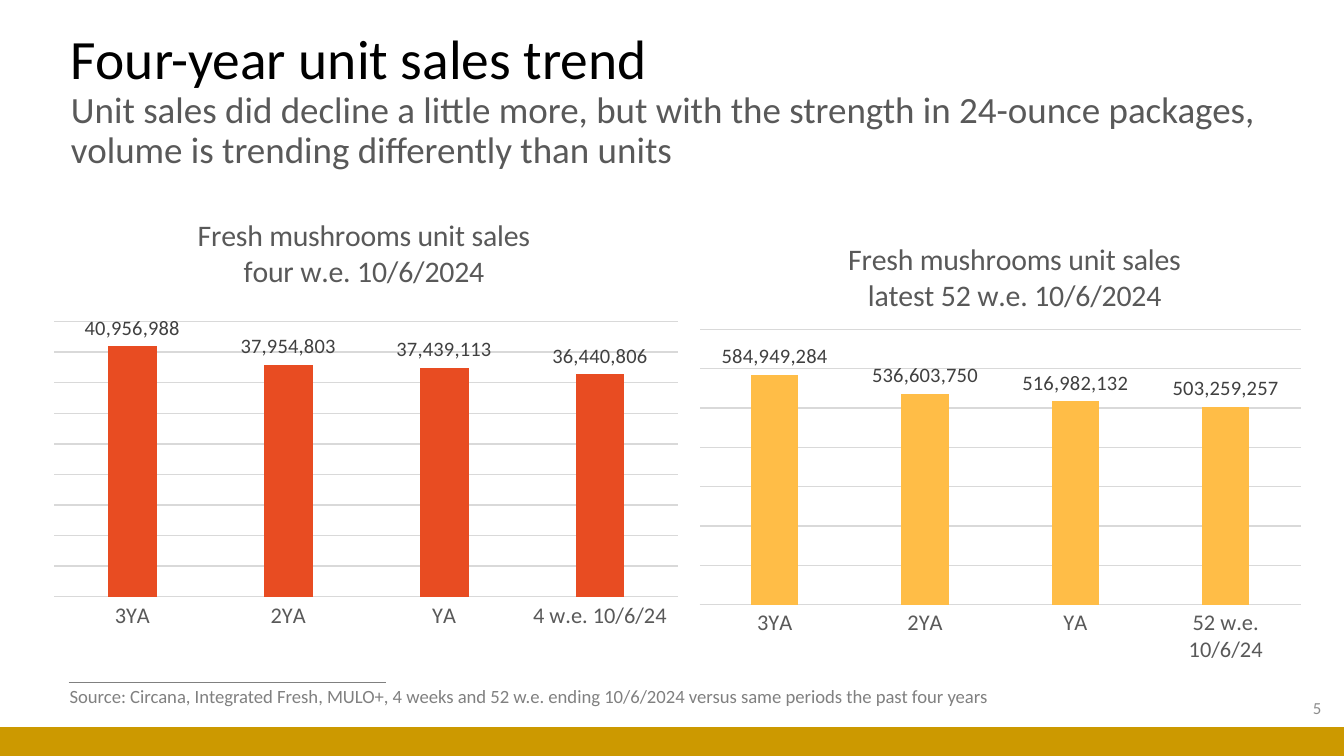
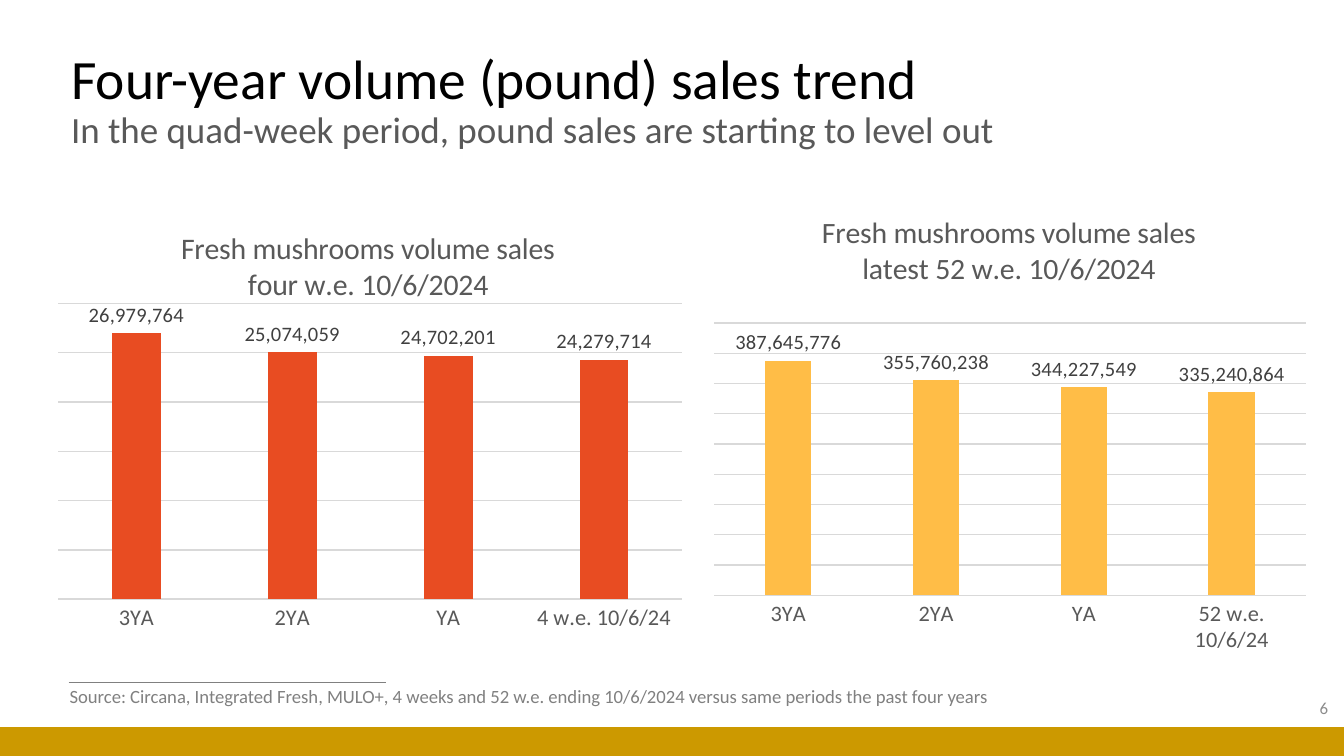
from dataclasses import dataclass
from typing import Any

from lxml.etree import SubElement
from pptx import Presentation
from pptx.chart.data import CategoryChartData
from pptx.dml.color import RGBColor
from pptx.enum.chart import XL_CHART_TYPE, XL_LABEL_POSITION, XL_TICK_LABEL_POSITION, XL_TICK_MARK
from pptx.enum.shapes import MSO_CONNECTOR, MSO_SHAPE
from pptx.enum.text import MSO_ANCHOR, MSO_AUTO_SIZE, PP_ALIGN
from pptx.oxml.ns import qn
from pptx.util import Inches, Pt

BLACK = RGBColor(0x00, 0x00, 0x00)
WHITE = RGBColor(0xFF, 0xFF, 0xFF)
DARK = RGBColor(0x40, 0x40, 0x40)
GRAY = RGBColor(0x59, 0x59, 0x59)
MID = RGBColor(0x80, 0x80, 0x80)
SOFT = RGBColor(0x8C, 0x8C, 0x8C)
PALE = RGBColor(0xD9, 0xD9, 0xD9)
GOLD = RGBColor(0xCC, 0x99, 0x00)
RED = RGBColor(0xE8, 0x4C, 0x22)
AMBER = RGBColor(0xFF, 0xBD, 0x47)

FACE = "Calibri"
WIDE = Inches(10)
HIGH = WIDE * 9 // 16
COMMAS = {"number_format": "#,##0", "number_format_is_linked": False}
SOURCE = ("Source: Circana, Integrated Fresh, MULO+, 4 weeks and 52 w.e. ending 10/6/2024 "
          "versus same periods the past four years")


@dataclass
class Bars:
    box: tuple[float, float, float, float]
    title: str
    spot: tuple[float, float]
    plot: tuple[float, float, float, float]
    last: str
    values: tuple[int, ...]
    color: RGBColor


@dataclass
class Page:
    head: str
    sub: str
    width: float
    number: int
    edge: float
    charts: tuple[Bars, ...]


PAGES = (
    Page("Four-year unit sales trend",
         "Unit sales did decline a little more, but with the strength in 24-ounce packages, "
         "volume is trending differently than units", 9.06, 5, 7.68, (
             Bars((0.4, 1.46, 4.65, 3.31), "Fresh mushrooms unit sales\nfour w.e. 10/6/2024",
                  (22.3, 3.5), (0, 28.2, 100, 61.9), "4 w.e. 10/6/24",
                  (40956988, 37954803, 37439113, 36440806), RED),
             Bars((5.2, 1.63, 4.72, 3.42), "Fresh mushrooms unit sales\nlatest 52 w.e. 10/6/2024",
                  (22.8, 3.6), (0, 24, 94.9, 59.9), "52 w.e. 10/6/24",
                  (584949284, 536603750, 516982132, 503259257), AMBER))),
    Page("Four-year volume (pound) sales trend",
         "In the quad-week period, pound sales are starting to level out", 8.35, 6, 7.73, (
             Bars((0.43, 1.55, 4.65, 3.31), "Fresh mushrooms volume sales\nfour w.e. 10/6/2024",
                  (19, 3.6), (0, 21.4, 100, 66.5), "4 w.e. 10/6/24",
                  (26979764, 25074059, 24702201, 24279714), RED),
             Bars((5.31, 1.55, 4.41, 3.31), "Fresh mushrooms volume sales\nlatest 52 w.e. 10/6/2024",
                  (17.5, 0.2), (0, 26.1, 100, 61.9), "52 w.e. 10/6/24",
                  (387645776, 355760238, 344227549, 335240864), AMBER))),
)


def apply(target: Any, values: dict[str, Any]) -> None:
    for name, value in values.items():
        setattr(target, name, value)


def ink(font: Any, size: float, color: RGBColor) -> None:
    apply(font, {"name": FACE, "size": Pt(size), "bold": False})
    font.color.rgb = color


def stroke(line: Any, color: RGBColor, width: float) -> None:
    line.color.rgb = color
    line.width = Pt(width)


def add_text(slide: Any, box: tuple[float, ...], parts: list[tuple[str, float, RGBColor]],
             frame: dict[str, Any], para: dict[str, Any]) -> None:
    body = slide.shapes.add_textbox(*map(Inches, box)).text_frame
    apply(body, {"word_wrap": True, **frame})
    first = body.paragraphs[0]
    apply(first, para)
    for index, (text, size, color) in enumerate(parts):
        if index:
            first.add_line_break()
        run = first.add_run()
        run.text = text
        ink(run.font, size, color)


def place(node: Any, index: int, shares: tuple[float, ...]) -> None:
    for old in node.findall(qn("c:layout")):
        node.remove(old)
    outer = SubElement(node, qn("c:layout"))
    node.insert(index, outer)
    inner = SubElement(outer, qn("c:manualLayout"))
    items = [("xMode", "edge"), ("yMode", "edge")]
    items += [(tag, f"{share / 100:.3f}") for tag, share in zip("xywh", shares)]
    if len(shares) == 4:
        items.insert(0, ("layoutTarget", "inner"))
    for tag, value in items:
        SubElement(inner, qn(f"c:{tag}")).set("val", value)


def add_bars(slide: Any, bars: Bars) -> None:
    data = CategoryChartData(number_format="#,##0")
    data.categories = ["3YA", "2YA", "YA", bars.last]
    data.add_series("Series 1", bars.values)
    chart = slide.shapes.add_chart(XL_CHART_TYPE.COLUMN_CLUSTERED,
                                   *map(Inches, bars.box), data).chart
    apply(chart, {"has_legend": False, "has_title": True})
    ink(chart.font, 10, BLACK)

    title = chart.chart_title
    title.text_frame.text = bars.title
    for line in title.text_frame.paragraphs:
        for run in line.runs:
            ink(run.font, 16, GRAY)
    title.include_in_layout = False
    place(title._element, 1, bars.spot)
    place(chart._chartSpace.chart.plotArea, 0, bars.plot)

    ticks = {"major_tick_mark": XL_TICK_MARK.NONE, "minor_tick_mark": XL_TICK_MARK.NONE}
    base = chart.category_axis
    apply(base, {**ticks, "tick_label_position": XL_TICK_LABEL_POSITION.NEXT_TO_AXIS})
    ink(base.tick_labels.font, 12, GRAY)
    stroke(base.format.line, PALE, 0.75)
    scale = chart.value_axis
    apply(scale, {**ticks, "minimum_scale": 0, "has_major_gridlines": True, "visible": False})
    apply(scale.tick_labels, COMMAS)
    stroke(scale.major_gridlines.format.line, PALE, 0.75)

    plot = chart.plots[0]
    apply(plot, {"gap_width": 219, "overlap": -27, "vary_by_categories": False,
                 "has_data_labels": True})
    apply(plot.data_labels, {**COMMAS, "show_value": True,
                             "position": XL_LABEL_POSITION.OUTSIDE_END})
    ink(plot.data_labels.font, 11, DARK)
    series = plot.series[0]
    series.invert_if_negative = False
    series.format.fill.solid()
    series.format.fill.fore_color.rgb = bars.color


def add_frame(slide: Any) -> None:
    slide.background.fill.solid()
    slide.background.fill.fore_color.rgb = WHITE
    rule = slide.shapes.add_connector(MSO_CONNECTOR.STRAIGHT, Inches(0.51), Inches(5.08),
                                      Inches(2.87), Inches(5.08))
    stroke(rule.line, MID, 0.5)
    SubElement(rule._element.spPr, qn("a:effectLst"))
    top = Inches(5.41)
    band = slide.shapes.add_shape(MSO_SHAPE.RECTANGLE, Inches(0), top, WIDE, HIGH - top)
    band.shadow.inherit = False
    band.fill.solid()
    band.fill.fore_color.rgb = GOLD
    band.line.fill.background()


def add_page(deck: Any, page: Page) -> None:
    slide = deck.slides.add_slide(deck.slide_layouts[6])
    middle = {"vertical_anchor": MSO_ANCHOR.MIDDLE}
    add_frame(slide)
    add_text(slide, (0.43, 0.36, page.width, 0.79),
             [(page.head, 29.7, BLACK), (page.sub, 19.8, GRAY)], middle, {"line_spacing": 0.9})
    add_text(slide, (page.edge, 5.12, 2.25, 0.3), [(str(page.number), 9, SOFT)],
             middle, {"alignment": PP_ALIGN.RIGHT})
    add_text(slide, (0.42, 5.05, 7.1, 0.27), [(SOURCE, 10, MID)],
             {"word_wrap": False, "auto_size": MSO_AUTO_SIZE.SHAPE_TO_FIT_TEXT}, {})
    for bars in page.charts:
        add_bars(slide, bars)


def main() -> None:
    deck = Presentation()
    apply(deck, {"slide_width": WIDE, "slide_height": HIGH})
    for page in PAGES:
        add_page(deck, page)
    deck.save("out.pptx")


if __name__ == "__main__":
    main()
